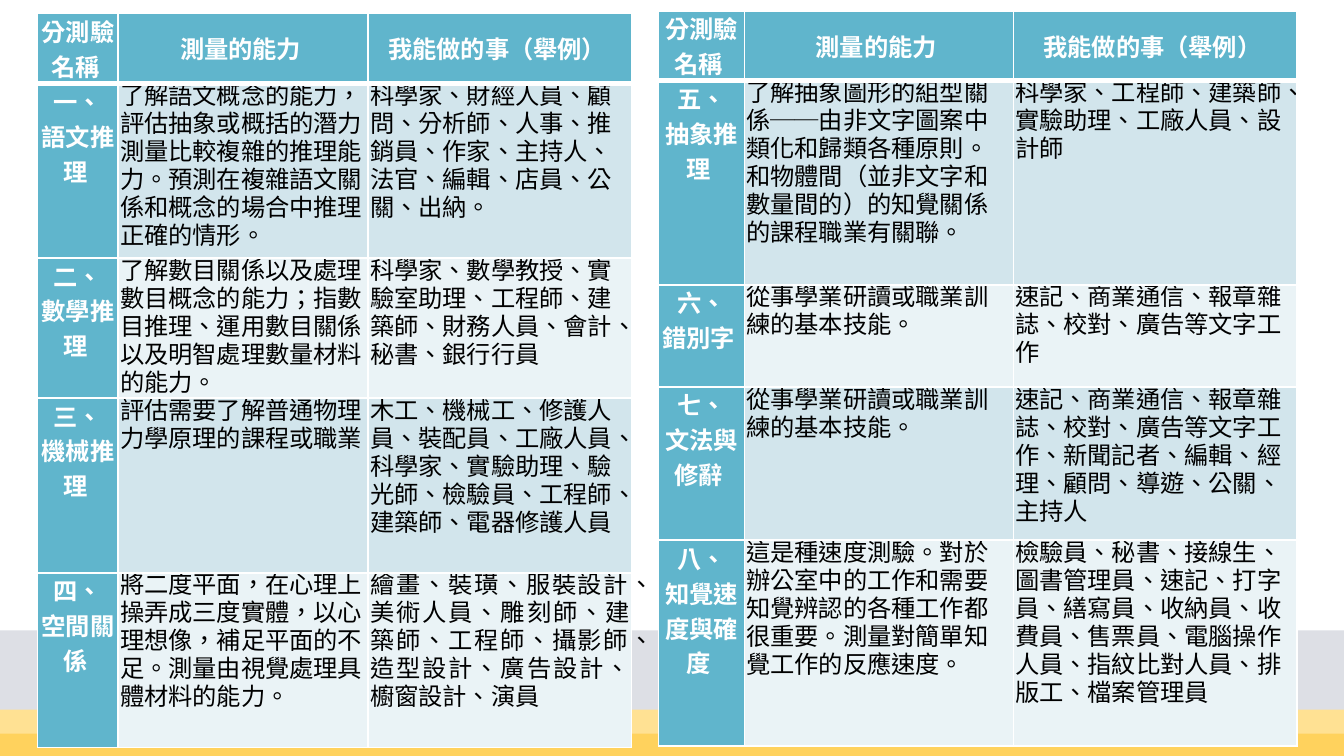
"""Build the slide with two tables of aptitude subtests, abilities and jobs."""
from copy import deepcopy

from pptx import Presentation
from pptx.dml.color import RGBColor
from pptx.enum.shapes import MSO_SHAPE as SHAPE
from pptx.enum.text import MSO_ANCHOR as ANCHOR, PP_ALIGN as ALIGN
from pptx.oxml import parse_xml
from pptx.oxml.ns import nsdecls, qn
from pptx.util import Inches, Pt


def paint(fill, color):
    fill.solid()
    fill.fore_color.rgb = RGBColor.from_string(color)


def border(cell, **widths):
    pr = cell._tc.get_or_add_tcPr()
    for i, (side, width) in enumerate(widths.items()):
        pr.insert(i, parse_xml(
            f'<a:{side} {nsdecls("a")} w="{Pt(width)}"><a:solidFill>'
            f'<a:srgbClr val="FFFFFF"/></a:solidFill></a:{side}>'))


HEADER = ("分測驗名稱 ", "測量的能力 ", "我能做的事（舉例） ")
TABLES = [
    {"box": (0.28, 0.1, 4.41, 5.38), "cols": (0.6, 1.86, 1.96),
     "rows": (0.21, 1.3, 0.98, 1.3, 1.3), "body": [
        ("一、\n語文推理 ",
         "了解語文概念的能力，評估抽象或概括的潛力；測量比較複雜的推理能力。預測在複雜語文關係和概念的場合中推理正確的情形。",
         "科學家、財經人員、顧問、分析師、人事、推銷員、作家、主持人、法官、編輯、店員、公關、出納。"),
        ("二、\n數學推理 ",
         "了解數目關係以及處理數目概念的能力；指數目推理、運用數目關係以及明智處理數量材料的能力。",
         "科學家、數學教授、實驗室助理、工程師、建築師、財務人員、會計、秘書、銀行行員"),
        ("三、\n機械推理 ",
         "評估需要了解普通物理力學原理的課程或職業。",
         "木工、機械工、修護人員、裝配員、工廠人員、科學家、實驗助理、驗光師、檢驗員、工程師、建築師、電器修護人員"),
        ("四、\n空間關係 ",
         "將二度平面，在心理上操弄成三度實體，以心理想像，補足平面的不足。測量由視覺處理具體材料的能力。",
         "繪畫、裝璜、服裝設計、美術人員、雕刻師、建築師、工程師、攝影師、造型設計、廣告設計、櫥窗設計、演員 ")]},
    {"box": (4.9, 0.08, 4.75, 5.4), "cols": (0.64, 2, 2.11),
     "rows": (0.44, 1.52, 0.76, 1.14, 1.53), "body": [
        ("五、\n抽象推理 ",
         "了解抽象圖形的組型關係──由非文字圖案中類化和歸類各種原則。和物體間（並非文字和數量間的）的知覺關係的課程職業有關聯。",
         "科學家、工程師、建築師、實驗助理、工廠人員、設計師"),
        ("六、\n錯別字 ",
         "從事學業研讀或職業訓練的基本技能。",
         "速記、商業通信、報章雜誌、校對、廣告等文字工作"),
        ("七、\n文法與修辭 ",
         "從事學業研讀或職業訓練的基本技能。",
         "速記、商業通信、報章雜誌、校對、廣告等文字工作、新聞記者、編輯、經理、顧問、導遊、公關、主持人"),
        ("八、\n知覺速度與確度 ",
         "這是種速度測驗。對於辦公室中的工作和需要知覺辨認的各種工作都很重要。測量對簡單知覺工作的反應速度。",
         "檢驗員、秘書、接線生、圖書管理員、速記、打字員、繕寫員、收納員、收費員、售票員、電腦操作人員、指紋比對人員、排版工、檔案管理員")]},
]
BANDS = [(4.69, 0.76, "DDDFE5"), (5.45, 0.18, "FFD25D"), (5.28, 0.18, "FFE193")]
CELL = {"margin_left": Pt(1), "margin_right": Pt(1), "margin_top": 0, "margin_bottom": 0}
LABEL = {"alignment": ALIGN.CENTER}
BODY = {"line_spacing": Pt(15), "space_before": Pt(2), "space_after": Pt(2)}

prs = Presentation()
prs.slide_width, prs.slide_height = Inches(10), Inches(10 * 9 / 16)
s = prs.slides.add_slide(prs.slide_layouts[6])

for top, height, color in BANDS:
    sp = s.shapes.add_shape(SHAPE.RECTANGLE, 0, Inches(top), prs.slide_width, Inches(height))
    sp.shadow.inherit = False
    sp.line.fill.background()
    paint(sp.fill, color)

for data in TABLES:
    box = [Inches(v) for v in data["box"]]
    frame = s.shapes.add_table(5, 3, *box)
    table = frame.table
    for col, width in zip(table.columns, data["cols"]):
        col.width = Inches(width)
    for row, height in zip(table.rows, data["rows"]):
        row.height = Inches(height)
    frame.width, frame.height = box[2:]
    for i, texts in enumerate([HEADER, *data["body"]]):
        for j, text in enumerate(texts):
            cell = table.cell(i, j)
            label = i == 0 or j == 0
            for name, value in CELL.items():
                setattr(cell, name, value)
            cell.vertical_anchor = ANCHOR.MIDDLE if i == 0 else ANCHOR.TOP
            paint(cell.fill, "60B5CC" if label else "D2E5EC" if i % 2 else "EAF3F6")
            border(cell, lnL=1, lnR=1, lnT=3 if i == 1 else 1, lnB=1 if i else 3)
            p = cell.text_frame.paragraphs[0]
            p.text = text
            for name, value in (LABEL if label else BODY).items():
                setattr(p, name, value)
            if not label and text.endswith(" "):
                p.alignment = ALIGN.JUSTIFY
            for r in p.runs:
                for name, value in {"size": Pt(13), "name": "Calibri", "bold": label}.items():
                    setattr(r.font, name, value)
                paint(r.font.fill, "FFFFFF" if label else "000000")
                r._r.rPr.set("lang", "zh-TW")
            for br in p._p.findall(qn("a:br")):
                br.append(deepcopy(p.runs[0]._r.rPr))

prs.save("out.pptx")
